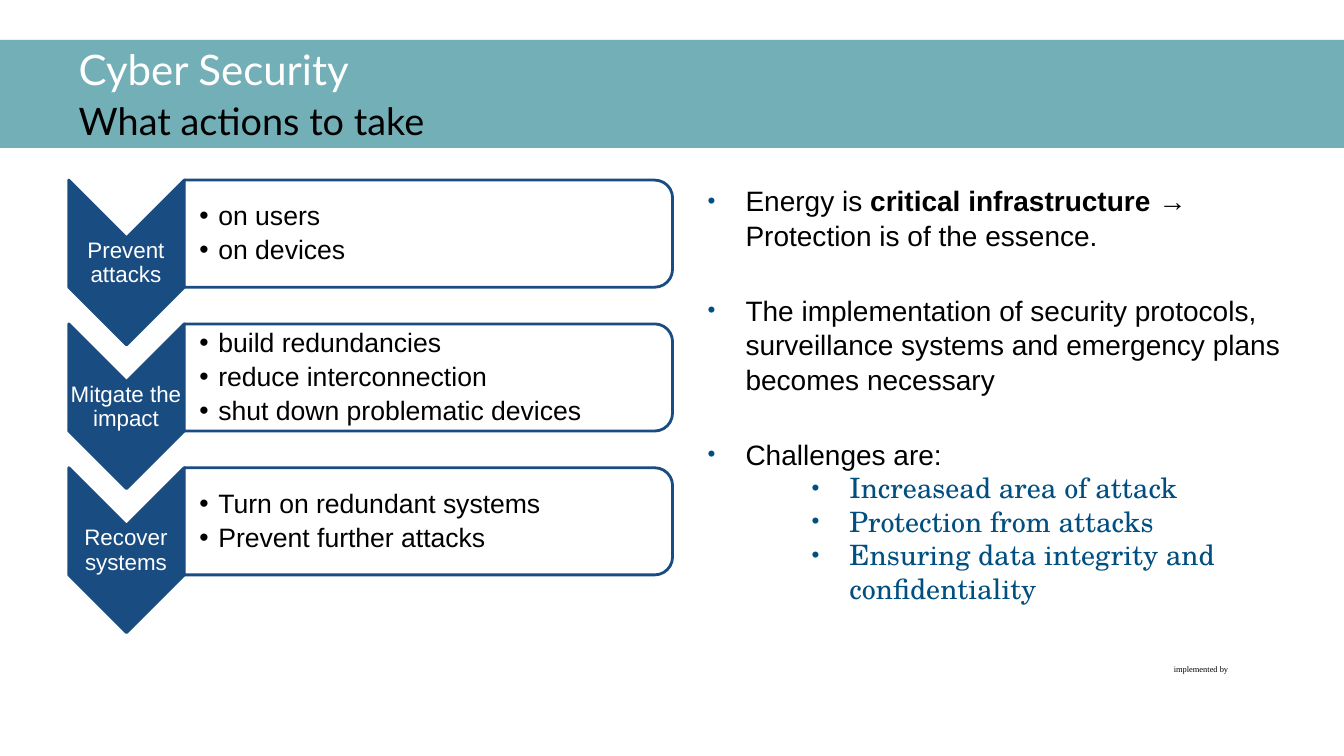
import pptx
import pptx.util
import pptx.dml.color
import pptx.enum.shapes
import pptx.enum.text
import pptx.oxml.ns
import lxml.etree

PX = 9525  # EMU per px, at 96 px to the inch
COLOURS = {
    "band": "73AFB7",
    "navy": "194C80",
    "blue": "004F80",
    "white": "FFFFFF",
    "black": "000000",
}
STEP_PITCH = 137
STEPS = [
    ("Prevent attacks", ["on users", "on devices"]),
    ("Mitgate the impact",
     ["build redundancies", "reduce interconnection", "shut down problematic devices"]),
    ("Recover systems", ["Turn on redundant systems", "Prevent further attacks"]),
]
POINTS = [
    [("Energy is ", False), ("critical infrastructure ", True),
     ("→ Protection is of the essence.", False)],
    [("The implementation of security protocols, surveillance systems "
      "and emergency plans becomes necessary", False)],
    [("Challenges are:", False)],
]
CHALLENGES = [
    "Increasead area of attack",
    "Protection from attacks",
    "Ensuring data integrity and confidentiality",
]
SHAPES = pptx.enum.shapes.MSO_SHAPE
MIDDLE = pptx.enum.text.MSO_ANCHOR.MIDDLE
CENTER = pptx.enum.text.PP_ALIGN.CENTER


def colour(name):
    return pptx.dml.color.RGBColor.from_string(COLOURS[name])


def add_child(parent, tag, **attributes):
    child = lxml.etree.SubElement(parent, pptx.oxml.ns.qn(tag))
    for key, value in attributes.items():
        child.set(key, str(value))
    return child


def add_shape(page, preset, bounds, fill, line=None, rotation=0):
    shape = page.shapes.add_shape(preset, *[value * PX for value in bounds])
    shape.shadow.inherit = False
    shape.rotation = rotation
    shape.fill.solid()
    shape.fill.fore_color.rgb = colour(fill)
    if line:
        shape.line.color.rgb = colour(line)
        shape.line.width = pptx.util.Pt(2)
    else:
        shape.line.fill.background()
    return shape


def add_text_box(page, bounds, insets, anchor=pptx.enum.text.MSO_ANCHOR.TOP, wrap=True):
    """Return the text frame of a new box; insets are left, top, right, bottom."""
    box = page.shapes.add_textbox(*[value * PX for value in bounds])
    frame = box.text_frame
    frame.word_wrap = wrap
    frame.vertical_anchor = anchor
    (frame.margin_left, frame.margin_top,
     frame.margin_right, frame.margin_bottom) = [value * PX for value in insets]
    return frame


def add_span(para, text, size, font="Arial", fill="black", bold=False):
    span = para.add_run()
    span.text = text
    span.font.size = pptx.util.Pt(size)
    span.font.name = font
    span.font.bold = bold
    span.font.color.rgb = colour(fill)


def next_para(frame, index):
    return frame.paragraphs[0] if index == 0 else frame.add_paragraph()


def set_bullet(para, left, hanging, fill="black", percent=100):
    properties = para._p.get_or_add_pPr()
    properties.set("marL", str(left * PX))
    properties.set("indent", str(-hanging * PX))
    add_child(add_child(properties, "a:buClr"), "a:srgbClr", val=COLOURS[fill])
    add_child(properties, "a:buSzPct", val=percent * 1000)
    add_child(properties, "a:buFont", typeface="Arial")
    add_child(properties, "a:buChar", char="•")


def add_step(page, top, label, actions):
    """Draw a downward chevron with its label, and the box of actions beside it."""
    add_shape(page, SHAPES.CHEVRON, (42, top + 24, 157, 110), "navy", "navy", 90)
    frame = add_text_box(page, (65, top + 56, 110, 47), (1, 1, 1, 1), MIDDLE)
    para = frame.paragraphs[0]
    para.alignment = CENTER
    para.line_spacing = 0.9
    add_span(para, label, 16, fill="white")

    panel = add_shape(page, SHAPES.ROUND_2_SAME_RECTANGLE,
                      (357, top - 181, 102, 465), "white", "navy", 90)
    panel_colour = panel._element.spPr.find(".//" + pptx.oxml.ns.qn("a:srgbClr"))
    add_child(panel_colour, "a:alpha", val=90000)
    frame = add_text_box(page, (176, top + 6, 460, 92), (14, 1, 1, 1), MIDDLE)
    for index, action in enumerate(actions):
        para = next_para(frame, index)
        set_bullet(para, 18, 18)
        para.line_spacing = 0.9
        para.space_after = pptx.util.Pt(4)
        add_span(para, action, 19)


def add_points(page):
    frame = add_text_box(page, (664, 170, 565, 427), (10, 4, 4, 4))
    for index, spans in enumerate(POINTS):
        para = next_para(frame, index)
        set_bullet(para, 36, 36, "blue", 80)
        para.line_spacing = 1.04
        if index:
            para.space_before = pptx.util.Pt(28)
        for text, bold in spans:
            add_span(para, text, 20, bold=bold)
    for challenge in CHALLENGES:
        para = frame.add_paragraph()
        para.level = 1
        set_bullet(para, 135, 36, "blue", 80)
        add_span(para, challenge, 20, "TeX Gyre Schola", "blue")


def add_title(page):
    add_shape(page, SHAPES.RECTANGLE, (0, 38, 1280, 103), "band")
    frame = add_text_box(page, (65, 38, 960, 103), (10, 5, 10, 5), MIDDLE)
    para = frame.paragraphs[0]
    para.line_spacing = pptx.util.Pt(35)
    add_span(para, "Cyber Security", 30, "Lato", "white")
    para.add_line_break()
    add_span(para, "What actions to take", 27, "Lato")


def main():
    deck = pptx.Presentation()
    deck.slide_width = 1280 * PX
    deck.slide_height = 720 * PX
    page = deck.slides.add_slide(deck.slide_layouts[6])
    add_title(page)
    for index, (label, actions) in enumerate(STEPS):
        add_step(page, 171 + index * STEP_PITCH, label, actions)
    add_points(page)
    footer = add_text_box(page, (1118, 632, 52, 10), (0, 0, 0, 0), wrap=False)
    add_span(footer.paragraphs[0], "implemented by", 6, "Times New Roman")
    deck.save("out.pptx")


if __name__ == "__main__":
    main()
